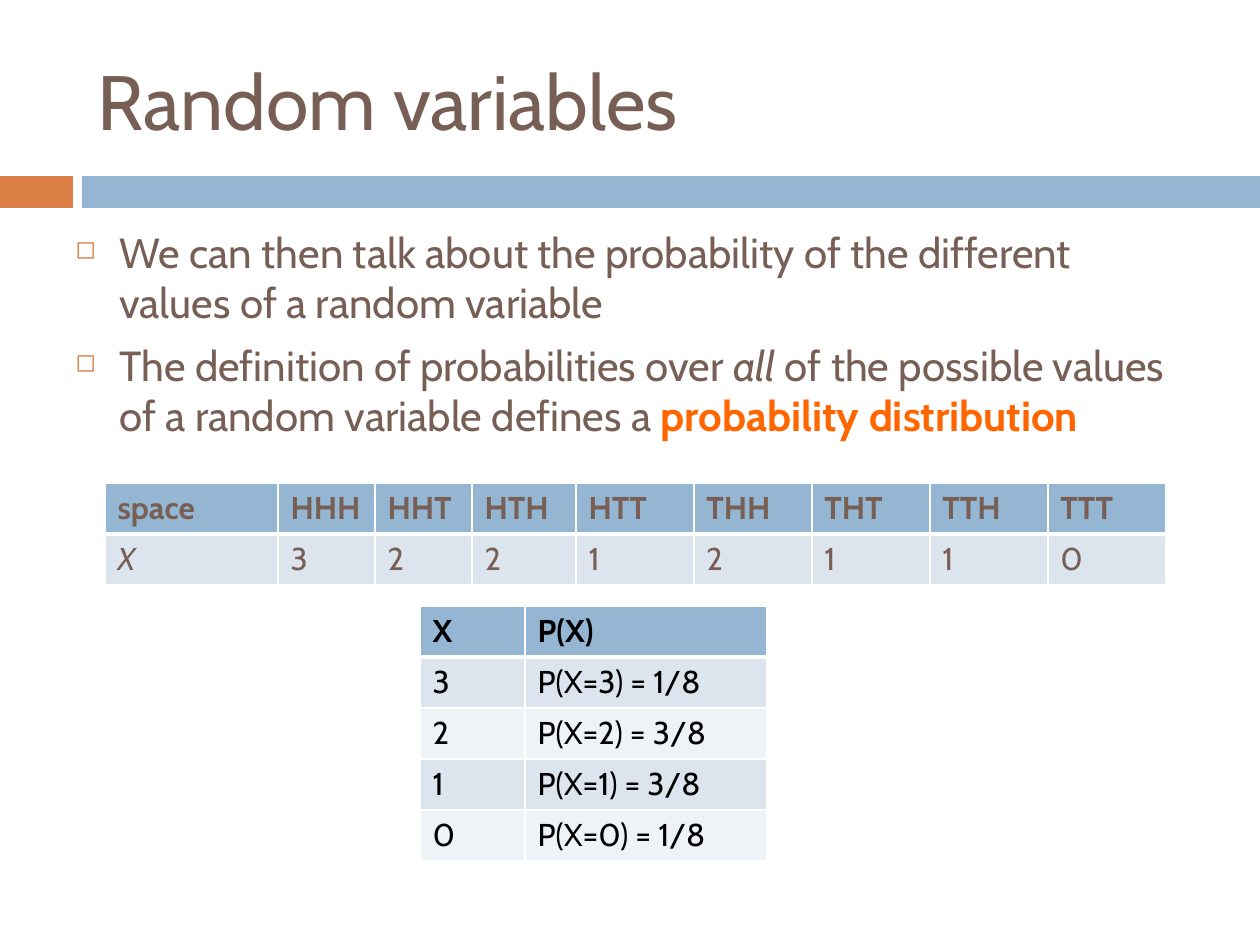
from lxml import etree
from pptx import Presentation
from pptx import util as u
from pptx.dml.color import RGBColor
from pptx.enum import shapes, text
from pptx.oxml import ns

FONT, BROWN, BLUE, ORANGE = "Cabin", "775F55", "94B6D2", "DD8047"
BANDS = ["DCE5EE", "EEF3F7"]
ROW_H = 51
rgb = RGBColor.from_string


def px(n):
    return u.Emu(round(n * 914400 / 126))


def add_grid(s, left, top, widths, rows, color):
    """Add a table with a blue header, banded rows and white rules."""
    frame = s.shapes.add_table(len(rows), len(widths), px(left), px(top),
                               px(sum(widths)), px(ROW_H * len(rows)))
    table = frame.table
    for column, width in zip(table.columns, widths):
        column.width = px(width)
    for i, row in enumerate(rows):
        table.rows[i].height = px(ROW_H)
        for j, value in enumerate(row):
            cell = table.cell(i, j)
            cell.text = value
            cell.fill.solid()
            cell.fill.fore_color.rgb = rgb(BANDS[(i - 1) % 2] if i else BLUE)
            font = cell.text_frame.paragraphs[0].font
            font.name, font.size, font.bold = FONT, u.Pt(18), i == 0
            font.color.rgb = rgb(color)
            tc_pr = cell._tc.get_or_add_tcPr()
            for k, side in enumerate(["lnL", "lnR", "lnT", "lnB"]):
                thick = (i, side) in [(0, "lnB"), (1, "lnT")]
                ln = etree.Element(ns.qn("a:" + side), w=str(u.Pt(3 if thick else 1)))
                fill = etree.SubElement(ln, ns.qn("a:solidFill"))
                etree.SubElement(fill, ns.qn("a:srgbClr"), val="FFFFFF")
                tc_pr.insert(k, ln)
    return table


prs = Presentation()
prs.slide_width, prs.slide_height = px(1260), px(945)
s = prs.slides.add_slide(prs.slide_layouts[5])

# Divider bars
for left, width, color in [(0, 73, ORANGE), (82, 1178, BLUE)]:
    sp = s.shapes.add_shape(shapes.MSO_SHAPE.RECTANGLE, px(left), px(176), px(width), px(32))
    sp.shadow.inherit = False
    sp.fill.solid()
    sp.fill.fore_color.rgb = rgb(color)
    sp.line.fill.background()

# Title
title = s.shapes.title
title.left, title.top, title.width, title.height = px(85), px(32), px(1124), px(136)
tf = title.text_frame
tf.text = "Random variables"
tf.vertical_anchor = text.MSO_ANCHOR.MIDDLE
p = tf.paragraphs[0]
p.alignment = text.PP_ALIGN.LEFT
p.font.name, p.font.size = FONT, u.Pt(44)
p.font.color.rgb = rgb(BROWN)

# Bullets
bullets = [
    [("We can then talk about the probability of the different values of a random variable", "")],
    [("The definition of probabilities over ", ""), ("all", "italic"),
     (" of the possible values of a random variable defines a ", ""),
     ("probability distribution", "term")],
]
body = s.shapes.add_textbox(px(63), px(220), px(1134), px(315))
tf = body.text_frame
tf.word_wrap = True
for i, runs in enumerate(bullets):
    p = tf.add_paragraph() if i else tf.paragraphs[0]
    p.space_before = u.Pt(7)
    p.font.name, p.font.size = FONT, u.Pt(24)
    p.font.color.rgb = rgb(BROWN)
    p_pr = p._p.get_or_add_pPr()
    p_pr.set("marL", str(px(44)))
    p_pr.set("indent", str(-px(44)))
    bu_clr = etree.Element(ns.qn("a:buClr"))
    etree.SubElement(bu_clr, ns.qn("a:srgbClr"), val=ORANGE)
    bu_size = etree.Element(ns.qn("a:buSzPct"), val="60000")
    bu_char = etree.Element(ns.qn("a:buChar"), char="◻")
    for k, el in enumerate([bu_clr, bu_size, bu_char], start=1):
        p_pr.insert(k, el)
    for words, style in runs:
        r = p.add_run()
        r.text = words
        if style == "italic":
            r.font.italic = True
        elif style == "term":
            r.font.bold = True
            r.font.color.rgb = rgb("FF6600")

# Sample space and distribution tables
outcomes = ["HHH", "HHT", "HTH", "HTT", "THH", "THT", "TTH", "TTT"]
heads = [str(outcome.count("H")) for outcome in outcomes]
table = add_grid(s, 105, 483, [173, 97, 97, 104] + [118] * 5,
                 [["space"] + outcomes, ["X"] + heads], BROWN)
table.cell(1, 0).text_frame.paragraphs[0].font.italic = True

distribution = [[x, f"P(X={x}) = {heads.count(x)}/8"] for x in "3210"]
add_grid(s, 420, 606, [105, 242], [["X", "P(X)"]] + distribution, "000000")

prs.save("out.pptx")
